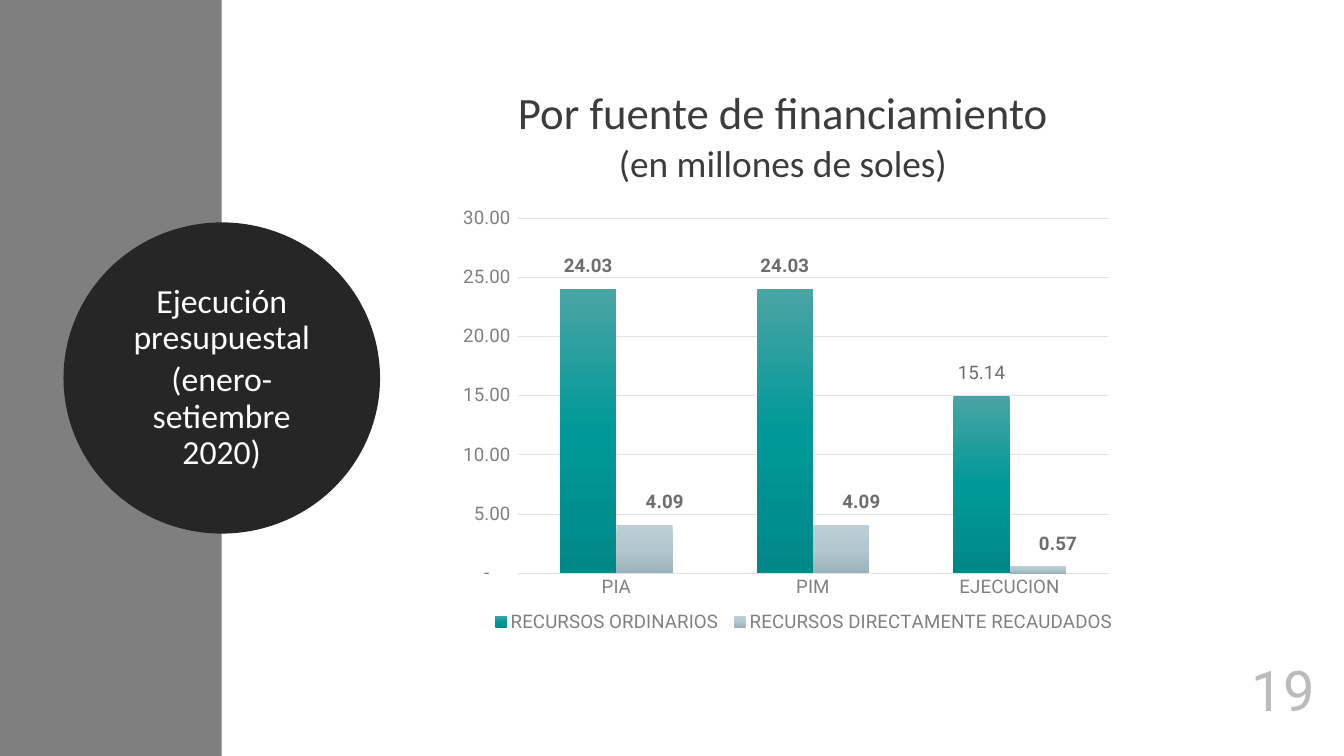
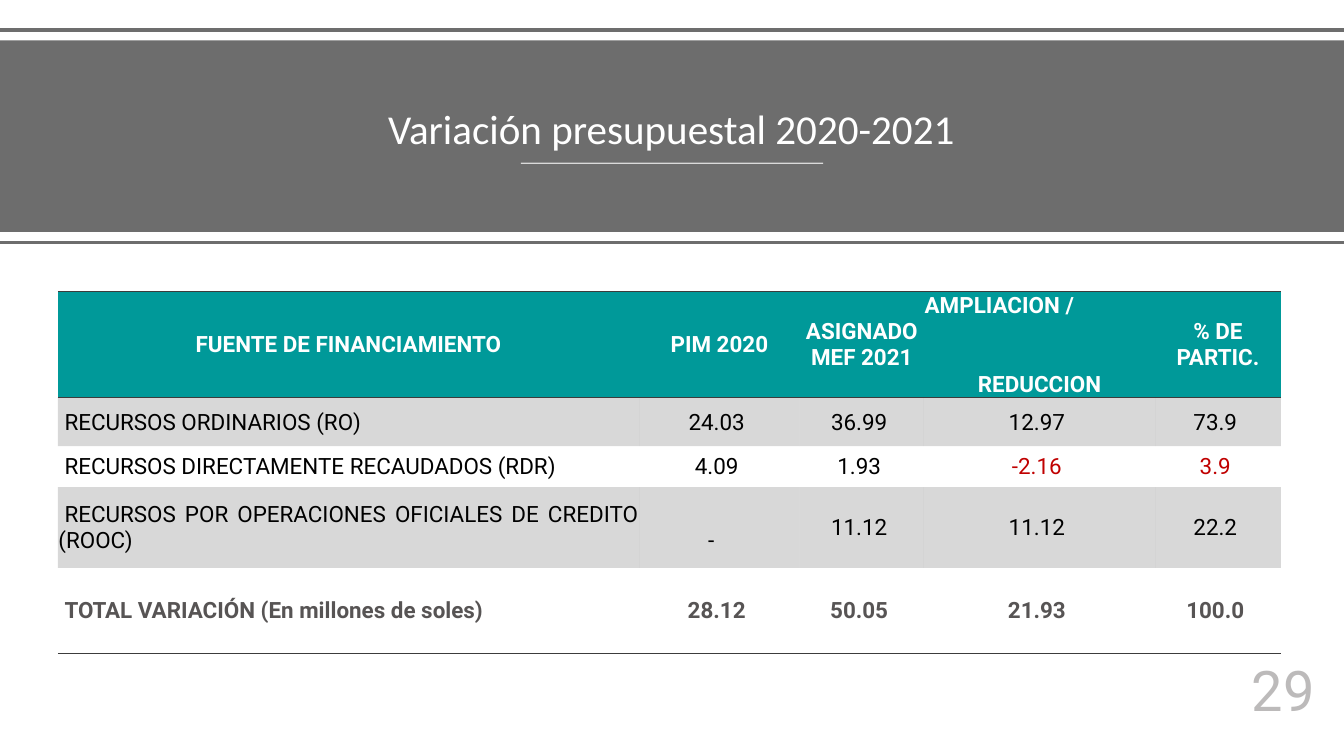
from collections import namedtuple

from pptx import Presentation
from pptx.chart.data import CategoryChartData
from pptx.dml.color import RGBColor
from pptx.enum.chart import XL_CHART_TYPE, XL_LABEL_POSITION, XL_LEGEND_POSITION, XL_TICK_MARK
from pptx.enum.shapes import MSO_CONNECTOR, MSO_SHAPE
from pptx.enum.text import MSO_ANCHOR, MSO_AUTO_SIZE, PP_ALIGN
from pptx.oxml import parse_xml
from pptx.oxml.ns import nsdecls, qn
from pptx.util import Inches, Pt

COLUMNS = XL_CHART_TYPE.COLUMN_CLUSTERED
OUTSIDE_END = XL_LABEL_POSITION.OUTSIDE_END
LEGEND_BOTTOM = XL_LEGEND_POSITION.BOTTOM
NO_TICK = XL_TICK_MARK.NONE
STRAIGHT = MSO_CONNECTOR.STRAIGHT
RECTANGLE, OVAL = MSO_SHAPE.RECTANGLE, MSO_SHAPE.OVAL
MIDDLE, BOTTOM = MSO_ANCHOR.MIDDLE, MSO_ANCHOR.BOTTOM
CENTER, RIGHT = PP_ALIGN.CENTER, PP_ALIGN.RIGHT
LEFT, JUSTIFY = PP_ALIGN.LEFT, PP_ALIGN.JUSTIFY
NO_AUTOFIT = MSO_AUTO_SIZE.NONE

WHITE = RGBColor(0xFF, 0xFF, 0xFF)
BLACK = RGBColor(0x00, 0x00, 0x00)
INK = RGBColor(0x3C, 0x3C, 0x3C)
CIRCLE_BLACK = RGBColor(0x26, 0x26, 0x26)
SIDE_GREY = RGBColor(0x7F, 0x7F, 0x7F)
BAND_GREY = RGBColor(0x6D, 0x6D, 0x6D)
AXIS_GREY = RGBColor(0x80, 0x80, 0x80)
GRID_GREY = RGBColor(0xE2, 0xE2, 0xE2)
NUMBER_GREY = RGBColor(0xBC, 0xBA, 0xBA)
TOTAL_GREY = RGBColor(0x57, 0x54, 0x54)
TEAL = RGBColor(0x00, 0x99, 0x99)
RED = RGBColor(0xC0, 0x00, 0x00)

HEADING_FONT, BODY_FONT = "Calibri", "Roboto"
ACCOUNTING = '_(* #,##0.00_);_(* \\(#,##0.00\\);_(* "-"??_);_(@_)'
NO_TABLE_STYLE = "{2D5ABB26-0587-4C30-8999-92F81FD0307C}"

Box = namedtuple("Box", "left top width height")
Source = namedtuple("Source", "name amounts gradient label_shift")

CATEGORIES = ["PIA", "PIM", "EJECUCION"]
SOURCES = [
    Source("RECURSOS ORDINARIOS", (24.03, 24.03, 15),
           ("4BA4A4", "009999", "008888"), 0),
    Source("RECURSOS DIRECTAMENTE RECAUDADOS", (4.09, 4.09, 0.57),
           ("BCCED4", "B1C8CF", "9BB2BA"), 0.03),
]

TABLE_ROWS = [
    ["FUENTE DE FINANCIAMIENTO", "PIM 2020", "ASIGNADO MEF 2021",
     "AMPLIACION /\nREDUCCION", "% DE PARTIC."],
    ["RECURSOS ORDINARIOS (RO)", "24.03", "36.99", "12.97", "73.9"],
    ["RECURSOS DIRECTAMENTE RECAUDADOS (RDR)", "4.09", "1.93", "-2.16", "3.9"],
    ["RECURSOS POR OPERACIONES OFICIALES DE CREDITO (ROOC)",
     "-", "11.12", "11.12", "22.2"],
    ["TOTAL VARIACIÓN (En millones de soles)", "28.12", "50.05", "21.93", "100.0"],
]
COLUMN_WIDTHS = [8.65, 2.39, 1.85, 3.44, 1.87]
ROW_HEIGHTS = [1.58, 0.72, 0.61, 1.2, 1.28]
TOTAL_ROW = len(TABLE_ROWS) - 1
SHADED_ROWS = (1, 3)
RED_CELLS = ((2, 3), (2, 4))


def inches(box):
    return [Inches(length) for length in box]


def set_font(font, size, color, name=BODY_FONT, bold=False):
    font.size, font.name, font.bold = Pt(size), name, bold
    font.color.rgb = color


def set_alpha(parent, percent):
    """Make the solid fill found below an XML element partly transparent."""
    color = next(parent.iter(qn("a:srgbClr")))
    color.append(parse_xml(f'<a:alpha {nsdecls("a")} val="{percent * 1000}"/>'))


def add_block(slide, kind, box, color):
    block = slide.shapes.add_shape(kind, *inches(box))
    block.shadow.inherit = False
    block.fill.solid()
    block.fill.fore_color.rgb = color
    block.line.fill.background()
    return block


def add_rule(slide, left, right, y, color, weight):
    rule = slide.shapes.add_connector(
        STRAIGHT, Inches(left), Inches(y), Inches(right), Inches(y))
    rule.line.color.rgb = color
    rule.line.width = Pt(weight)
    rule._element.spPr.append(parse_xml(f'<a:effectLst {nsdecls("a")}/>'))
    return rule


def write_heading(shape, lines, color, anchor=MIDDLE):
    """Fill a shape with centred heading lines given as (text, size)."""
    frame = shape.text_frame
    frame.word_wrap = True
    frame.auto_size = NO_AUTOFIT
    frame.vertical_anchor = anchor
    frame.text = "\n".join(text for text, _ in lines)
    for paragraph, (_, size) in zip(frame.paragraphs, lines):
        paragraph.alignment = CENTER
        paragraph.line_spacing = 0.9
        paragraph.space_before, paragraph.space_after = Pt(0), Pt(6)
        set_font(paragraph.font, size, color, HEADING_FONT)


def place_title(slide, box, lines, color, anchor=MIDDLE):
    title = slide.shapes.title
    title.left, title.top, title.width, title.height = inches(box)
    write_heading(title, lines, color, anchor)
    title._element.getparent().append(title._element)  # in front of the bands


def add_page_number(slide, number):
    frame = slide.shapes.add_textbox(*inches(Box(16.69, 9.71, 2.97, 1.11))).text_frame
    frame.word_wrap = True
    frame.text = str(number)
    frame.paragraphs[0].alignment = RIGHT
    set_font(frame.paragraphs[0].font, 60, NUMBER_GREY)


def add_side_panel(slide, box):
    """Grey side column with a dark circle centred on its right edge."""
    add_block(slide, RECTANGLE, box, SIDE_GREY)
    width, height = 4.52, 4.44
    circle = add_block(slide, OVAL, Box(
        box.left + box.width - width / 2, box.top + (box.height - height) / 2,
        width, height), CIRCLE_BLACK)
    circle.line.color.rgb = CIRCLE_BLACK
    circle.line.width = Pt(13.75)
    write_heading(circle, [("Ejecución presupuestal", 36.1),
                           ("(enero-setiembre 2020)", 36.1)], WHITE)


def chart_layout(children):
    return parse_xml(f'<c:layout {nsdecls("c")}><c:manualLayout>{children}'
                     '</c:manualLayout></c:layout>')


def label_layout(x, y):
    return chart_layout(f'<c:x val="{x}"/><c:y val="{y}"/>')


def area_layout(box, target=""):
    """Layout of a chart region, with its box in fractions of the chart."""
    sizes = "".join(f'<c:{name} val="{size}"/>' for name, size in zip("xywh", box))
    return chart_layout(target + '<c:xMode val="edge"/><c:yMode val="edge"/>' + sizes)


def replace_layout(region, index, layout):
    for automatic in region.findall(qn("c:layout")):
        region.remove(automatic)
    region.insert(index, layout)


def fill_gradient(series, colors):
    stops = "".join(f'<a:gs pos="{i * 50000}"><a:srgbClr val="{color}"/></a:gs>'
                    for i, color in enumerate(colors))
    series._element.get_or_add_spPr().insert(0, parse_xml(
        f'<a:gradFill {nsdecls("a")}><a:gsLst>{stops}</a:gsLst>'
        '<a:lin ang="5400000" scaled="0"/></a:gradFill>'))


def label_bars(series, shift):
    labels = series.data_labels
    labels.show_value = True
    labels.number_format, labels.number_format_is_linked = ACCOUNTING, False
    labels.position = OUTSIDE_END
    set_font(labels.font, 20, BAND_GREY, bold=True)
    for i in range(len(CATEGORIES)):
        label = series.points[i].data_label
        set_font(label.font, 20, BAND_GREY, bold=True)
        label.position = OUTSIDE_END
    for label in labels._element.findall(qn("c:dLbl")):
        label.insert(1, label_layout(shift, -0.02))
    for leader_lines in labels._element.findall(qn("c:showLeaderLines")):
        leader_lines.set("val", "0")


def add_funding_chart(slide, box):
    data = CategoryChartData(number_format=ACCOUNTING)
    data.categories = CATEGORIES
    for source in SOURCES:
        data.add_series(source.name, source.amounts)
    chart = slide.shapes.add_chart(COLUMNS, *inches(box), data).chart
    set_font(chart.font, 10, INK)
    chart.has_title = False
    chart.has_legend = True
    chart.legend.position = LEGEND_BOTTOM
    chart.legend.include_in_layout = False
    set_font(chart.legend.font, 20, AXIS_GREY)

    for axis in (chart.category_axis, chart.value_axis):
        axis.major_tick_mark = axis.minor_tick_mark = NO_TICK
        set_font(axis.tick_labels.font, 20, AXIS_GREY)
    chart.category_axis.format.line.color.rgb = GRID_GREY
    chart.category_axis.format.line.width = Pt(1)
    amounts = chart.value_axis
    amounts.minimum_scale, amounts.maximum_scale, amounts.major_unit = 0, 30, 5
    amounts.format.line.fill.background()
    amounts.major_gridlines.format.line.color.rgb = GRID_GREY
    amounts.major_gridlines.format.line.width = Pt(0.75)
    amounts.tick_labels.number_format = ACCOUNTING
    amounts.tick_labels.number_format_is_linked = False

    plot = chart.plots[0]
    plot.gap_width, plot.overlap, plot.vary_by_categories = 150, 0, False
    for series, source in zip(plot.series, SOURCES):
        fill_gradient(series, source.gradient)
        label_bars(series, source.label_shift)
    executed = plot.series[0].points[2].data_label.text_frame
    executed.text = "15.14"
    set_font(executed.paragraphs[0].runs[0].font, 20, BAND_GREY)

    replace_layout(chart._chartSpace.chart.plotArea, 0, area_layout(
        Box(0.108, 0.046, 0.871, 0.8), '<c:layoutTarget val="inner"/>'))
    replace_layout(chart.legend._element, 1, area_layout(Box(0.06, 0.92, 0.94, 0.07)))


def add_title_band(slide, box):
    """Grey band between two rules, with an underlined title."""
    for y in (box.top - 0.15, box.top + box.height + 0.16):
        add_rule(slide, box.left, box.left + box.width, y, BAND_GREY, 4)
    add_block(slide, RECTANGLE, box, BAND_GREY)
    place_title(slide, Box(box.left + 0.86, box.top + 0.2, 18.27, 1.53),
                [("Variación presupuestal 2020-2021", 44)], WHITE, BOTTOM)
    middle = box.left + box.width / 2
    underline = add_rule(slide, middle - 2.25, middle + 2.25, box.top + 1.83, WHITE, 1.5)
    set_alpha(underline.line._ln, 75)


def add_borders(cell, sides):
    for i, side in enumerate(sides):
        cell._tc.get_or_add_tcPr().insert(i, parse_xml(
            f'<a:ln{side} {nsdecls("a")} w="12700"><a:solidFill>'
            f'<a:srgbClr val="{INK}"/></a:solidFill></a:ln{side}>'))


def format_cell(cell, row, column):
    cell.vertical_anchor = MIDDLE
    cell.margin_left = cell.margin_right = cell.margin_top = Inches(0.01)
    cell.margin_bottom = 0
    if row == 0:
        cell.fill.solid()
        cell.fill.fore_color.rgb = TEAL
    elif row in SHADED_ROWS:
        cell.fill.solid()
        cell.fill.fore_color.rgb = INK
        set_alpha(cell._tc.tcPr, 20)
    else:
        cell.fill.background()
    add_borders(cell, {0: "TB", TOTAL_ROW: "B"}.get(row, ""))

    color = {0: WHITE, TOTAL_ROW: TOTAL_GREY}.get(row, BLACK)
    if (row, column) in RED_CELLS:
        color = RED
    for paragraph in cell.text_frame.paragraphs:
        paragraph.alignment = CENTER
        if row and column == 0:
            paragraph.alignment = JUSTIFY
            paragraph._p.get_or_add_pPr().set("indent", str(Inches(0.09)))
        set_font(paragraph.font, 24, color, bold=row in (0, TOTAL_ROW))
    if row and column:
        cell.margin_right = Inches(0.09)


def add_budget_table(slide, box):
    table = slide.shapes.add_table(len(TABLE_ROWS), len(COLUMN_WIDTHS), *inches(box)).table
    table.first_row = table.horz_banding = False
    table._tbl.tblPr.find(qn("a:tableStyleId")).text = NO_TABLE_STYLE
    for column, width in zip(table.columns, COLUMN_WIDTHS):
        column.width = Inches(width)
    for row, height in zip(table.rows, ROW_HEIGHTS):
        row.height = Inches(height)
    for r, texts in enumerate(TABLE_ROWS):
        for c, text in enumerate(texts):
            table.cell(r, c).text = text
            format_cell(table.cell(r, c), r, c)

    increase, reduction = table.cell(0, 3).text_frame.paragraphs
    increase.alignment = LEFT
    reduction.space_before = Pt(56)
    no_credit = table.cell(3, 1)
    no_credit.margin_top, no_credit.margin_right = Inches(0.4), Inches(0.25)


def build_funding_slide(slide):
    add_side_panel(slide, Box(0, 0, 3.3, 11.25))
    add_funding_chart(slide, Box(6.62, 2.94, 10.08, 6.61))
    place_title(slide, Box(3.3, 0.82, 16.7, 2.47),
                [("Por fuente de financiamiento", 48), ("(en millones de soles)", 40)], INK)
    add_page_number(slide, 19)


def build_variation_slide(slide):
    add_title_band(slide, Box(0, 0.6, 20, 2.85))
    add_budget_table(slide, Box(0.86, 4.34, sum(COLUMN_WIDTHS), sum(ROW_HEIGHTS)))
    add_page_number(slide, 29)


def main():
    deck = Presentation()
    deck.slide_width, deck.slide_height = Inches(20), Inches(11.25)
    title_only = deck.slide_layouts[5]
    for build in (build_funding_slide, build_variation_slide):
        build(deck.slides.add_slide(title_only))
    deck.save("out.pptx")


if __name__ == "__main__":
    main()
